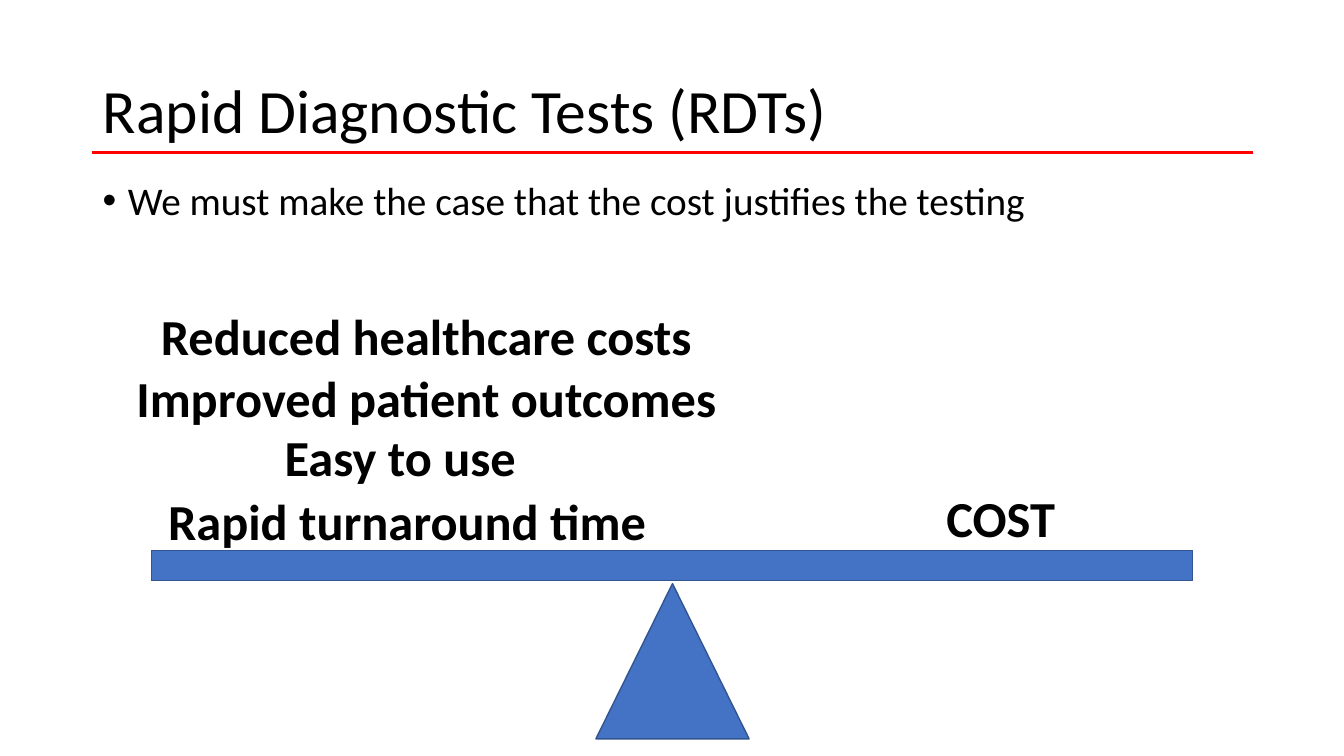
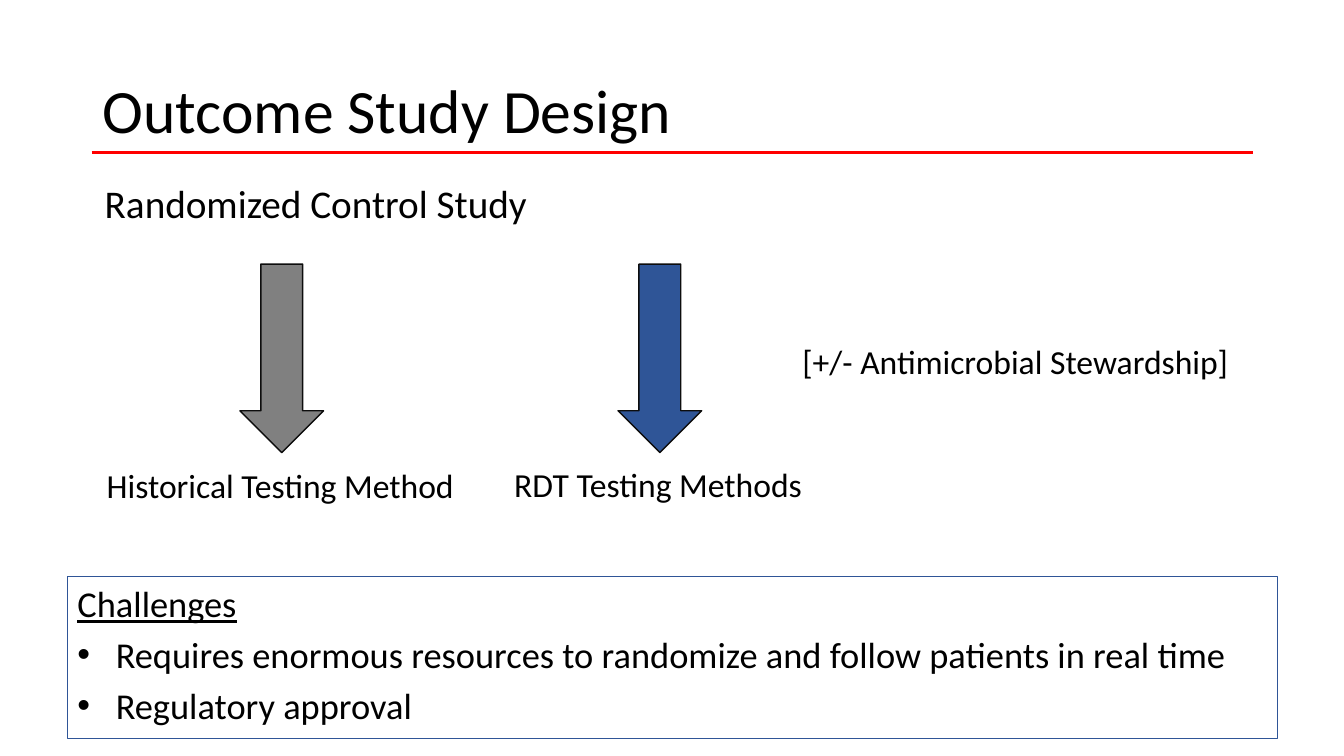
import pptx
import pptx.dml.color
import pptx.enum.shapes
import pptx.enum.text
import pptx.oxml
import pptx.oxml.ns
import pptx.util

Inches = pptx.util.Inches
Pt = pptx.util.Pt
RGBColor = pptx.dml.color.RGBColor
SHAPE = pptx.enum.shapes.MSO_SHAPE
ALIGN = pptx.enum.text.PP_ALIGN
ANCHOR = pptx.enum.text.MSO_ANCHOR

FONT = "Calibri"
BLACK = RGBColor(0x00, 0x00, 0x00)
RED = RGBColor(0xFF, 0x00, 0x00)
BLUE = RGBColor(0x44, 0x72, 0xC4)
BLUE_EDGE = RGBColor(0x32, 0x54, 0x91)
NAVY = RGBColor(0x2F, 0x55, 0x97)
GREY = RGBColor(0x80, 0x80, 0x80)
ARROW_EDGE = RGBColor(0x0D, 0x0D, 0x0D)


def write(paragraph, text, *, size, bold=False, underline=False, align=ALIGN.LEFT,
          line_spacing=None, before=0, bullet_indent=None):
    run = paragraph.add_run()
    run.text = text
    run.font.name = FONT
    run.font.size = Pt(size)
    run.font.bold = bold
    run.font.underline = underline
    run.font.color.rgb = BLACK
    paragraph.alignment = align
    paragraph.line_spacing = line_spacing
    paragraph.space_before = Pt(before)
    if bullet_indent:
        properties = paragraph._p.get_or_add_pPr()
        properties.set("marL", str(Inches(bullet_indent)))
        properties.set("indent", str(-Inches(bullet_indent)))
        for tag, name, value in (("a:buFont", "typeface", "Arial"), ("a:buChar", "char", "•")):
            bullet = pptx.oxml.ns.qn(tag)
            properties.append(properties.makeelement(bullet, {name: value}))


def place(shape, left, top, width, height):
    shape.left, shape.top = Inches(left), Inches(top)
    shape.width, shape.height = Inches(width), Inches(height)


def add_text(slide, text, left, top, width, height, wrap=True, **text_format):
    box = slide.shapes.add_textbox(*map(Inches, (left, top, width, height)))
    box.text_frame.word_wrap = wrap
    write(box.text_frame.paragraphs[0], text, **text_format)


def add_figure(slide, kind, left, top, width, height, edge, fill=None, edge_width=1):
    figure = slide.shapes.add_shape(kind, *map(Inches, (left, top, width, height)))
    figure.shadow.inherit = False
    if fill is None:
        figure.fill.background()
    else:
        figure.fill.solid()
        figure.fill.fore_color.rgb = fill
    figure.line.color.rgb = edge
    figure.line.width = Pt(edge_width)
    return figure


def add_titled_slide(deck, heading):
    slide = deck.slides.add_slide(deck.slide_layouts.get_by_name("Title Only"))
    title = slide.shapes.title
    place(title, 0.92, 0.4, 11.5, 1.45)
    frame = title.text_frame
    frame.auto_size = pptx.enum.text.MSO_AUTO_SIZE.NONE
    frame.vertical_anchor = ANCHOR.MIDDLE
    write(frame.paragraphs[0], heading, size=44, line_spacing=0.9)
    rule = slide.shapes.add_connector(
        pptx.enum.shapes.MSO_CONNECTOR.STRAIGHT,
        Inches(0.91), Inches(1.51), Inches(12.43), Inches(1.51))
    rule.line.color.rgb = RED
    rule.line.width = Pt(2.25)
    properties = rule._element.spPr
    properties.append(properties.makeelement(pptx.oxml.ns.qn("a:effectLst"), {}))
    return slide


def build_balance(deck):
    slide = add_titled_slide(deck, "Rapid Diagnostic Tests (RDTs)")
    add_text(slide, "We must make the case that the cost justifies the testing",
             0.92, 1.75, 11.75, 0.94, size=28, line_spacing=0.9, before=10, bullet_indent=0.25)
    add_figure(slide, SHAPE.ISOSCELES_TRIANGLE, 5.91, 5.79, 1.52, 1.54, BLUE_EDGE, BLUE)
    add_figure(slide, SHAPE.RECTANGLE, 1.5, 5.46, 10.33, 0.3, BLUE_EDGE, BLUE)
    weights = (
        ("Reduced healthcare costs", 1.03, 2.98, 6.4),
        ("Improved patient outcomes", 1.03, 3.59, 6.4),
        ("Easy to use", 1.35, 4.18, 5.24),
        ("Rapid turnaround time", 1.42, 4.81, 5.24),
        ("COST", 8.07, 4.78, 3.71),
    )
    for text, left, top, width in weights:
        add_text(slide, text, left, top, width, 0.71, size=36, bold=True, align=ALIGN.CENTER)


def add_challenges(slide, challenges):
    panel = add_figure(slide, SHAPE.RECTANGLE, 0.67, 5.72, 12, 1.61, NAVY, edge_width=0.75)
    frame = panel.text_frame
    frame.word_wrap = True
    frame.vertical_anchor = ANCHOR.TOP
    write(frame.paragraphs[0], "Challenges", size=26, underline=True)
    for challenge in challenges:
        write(frame.add_paragraph(), challenge, size=26, before=5, bullet_indent=0.38)


def build_study_design(deck):
    slide = add_titled_slide(deck, "Outcome Study Design")
    add_text(slide, "Randomized Control Study", 0.94, 1.78, 7.82, 0.67,
             size=28, line_spacing=0.9, before=10)
    arms = (
        ("Historical Testing Method", 2.38, GREY, 0.96, 4.56, 3.68),
        ("RDT Testing Methods", 6.13, NAVY, 5, 4.55, 3.09),
    )
    for method, arrow_left, fill, left, top, width in arms:
        add_figure(slide, SHAPE.DOWN_ARROW, arrow_left, 2.62, 0.83, 1.87, ARROW_EDGE, fill)
        add_text(slide, method, left, top, width, 0.5, wrap=False, size=24)
    add_text(slide, "[+/- Antimicrobial Stewardship]", 7.86, 3.33, 4.53, 0.5, size=24)
    add_challenges(slide, (
        "Requires enormous resources to randomize and follow patients in real time",
        "Regulatory approval",
    ))


def main():
    deck = pptx.Presentation()
    deck.slide_width, deck.slide_height = Inches(13.33), Inches(7.5)
    build_balance(deck)
    build_study_design(deck)
    deck.save("out.pptx")


if __name__ == "__main__":
    main()
